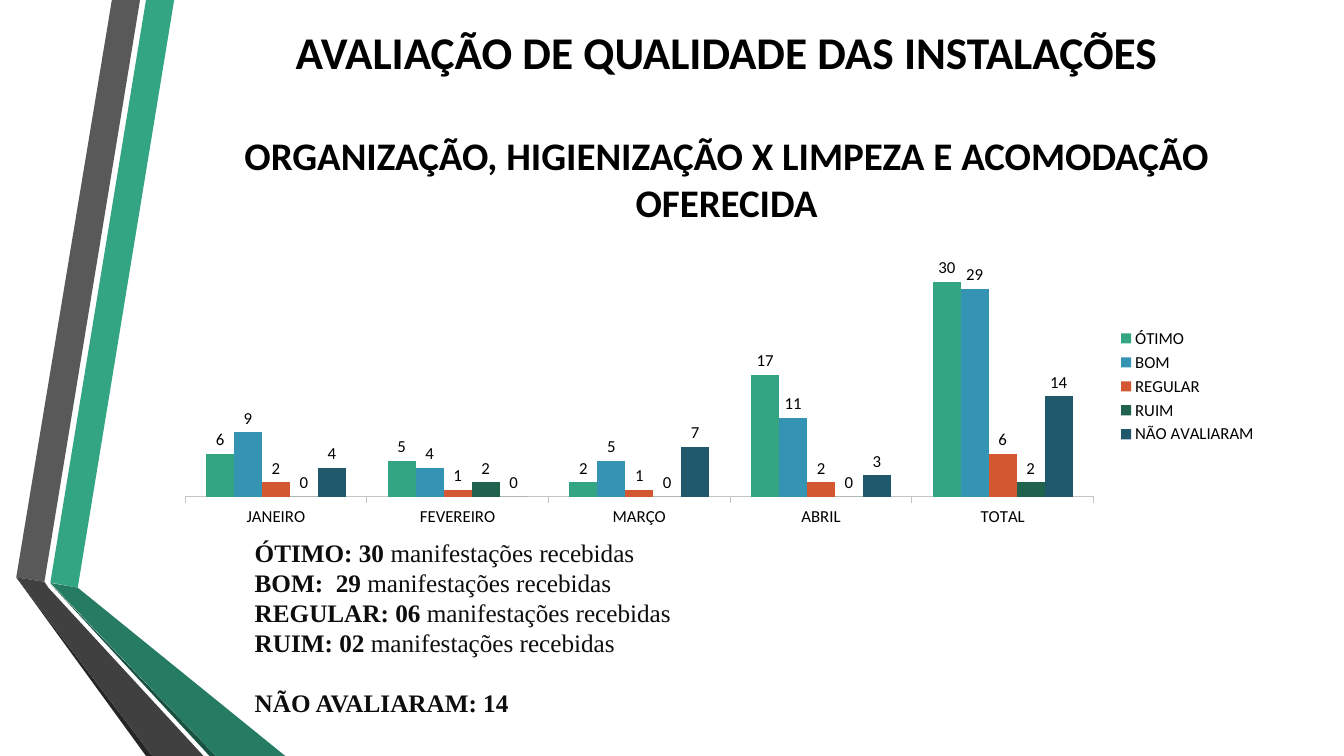
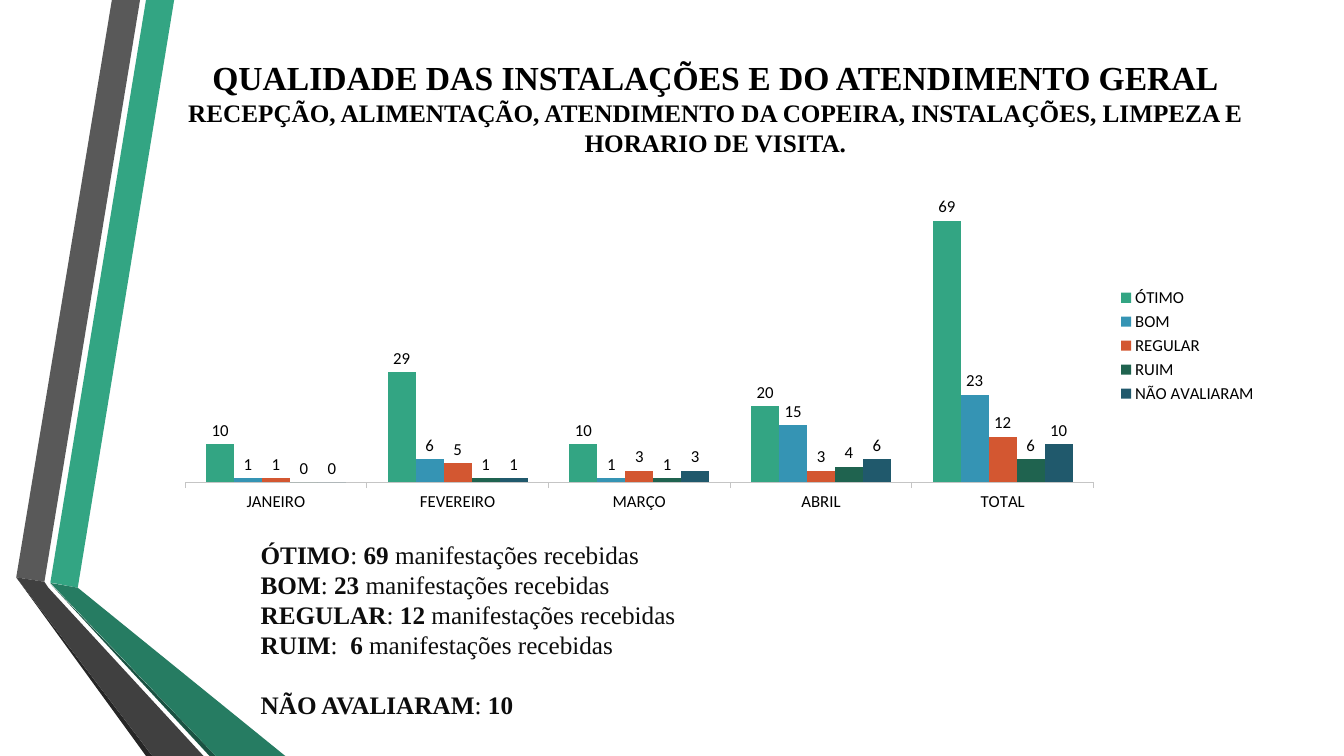
from pptx import Presentation
from pptx.chart.data import CategoryChartData
from pptx.dml.color import RGBColor
from pptx.enum.chart import XL_CHART_TYPE, XL_LABEL_POSITION, XL_LEGEND_POSITION, XL_TICK_MARK
from pptx.enum.text import PP_ALIGN
from pptx.util import Cm, Pt

COLORS = {
    "green": "33A583",
    "green_fold": "267C62",
    "green_edge": "1A5242",
    "gray": "595959",
    "gray_fold": "404040",
    "gray_edge": "262626",
    "blue": "3594B4",
    "orange": "D35731",
    "dark_green": "1F634F",
    "dark_blue": "20596C",
    "axis": "C5C5C5",
    "title": "000000",
    "body": "0D0D0D",
}
SANS = "Calibri"
SERIF = "Times New Roman"
BODY_SIZE = Pt(18)
BODY_LINE = Pt(21.5)
CONTENT_WIDTH = Cm(27.84)
CHART_LEFT = Cm(4.11)

BANDS = [
    ("green", [(1.27, 14.68), (1.96, 14.81), (4.39, 0), (3.68, 0)]),
    ("gray", [(3.53, 0), (2.82, 0), (0.41, 14.55), (1.12, 14.66)]),
    ("gray_edge", [(0.41, 14.55), (3.68, 19.05), (3.84, 19.05)]),
    ("green_edge", [(1.27, 14.71), (5.28, 19.05), (5.44, 19.05)]),
    ("green_fold", [(1.27, 14.69), (5.44, 19.05), (7.19, 19.05), (1.96, 14.81)]),
    ("gray_fold", [(5.13, 19.05), (1.22, 14.81), (1.12, 14.66), (0.41, 14.55), (3.84, 19.05)]),
]
MONTHS = ["JANEIRO", "FEVEREIRO", "MARÇO", "ABRIL", "TOTAL"]
RATINGS = [
    ("ÓTIMO", "green"),
    ("BOM", "blue"),
    ("REGULAR", "orange"),
    ("RUIM", "dark_green"),
    ("NÃO AVALIARAM", "dark_blue"),
]
RECEIVED = "manifestações recebidas"


def rgb(name):
    return RGBColor.from_string(COLORS[name])


def style_font(font, name, size, color, bold=False):
    font.name = name
    font.size = size
    font.bold = bold
    font.color.rgb = rgb(color)


def add_bands(slide):
    for color, points in BANDS:
        corners = [(Cm(x), Cm(y)) for x, y in points]
        builder = slide.shapes.build_freeform(*corners[0])
        builder.add_line_segments(corners[1:], close=True)
        shape = builder.convert_to_shape()
        shape.shadow.inherit = False
        shape.fill.solid()
        shape.fill.fore_color.rgb = rgb(color)
        shape.line.fill.background()


def add_text_frame(slide, left, top, width, height):
    text_frame = slide.shapes.add_textbox(left, top, width, height).text_frame
    text_frame.word_wrap = True
    return text_frame


def add_title(slide, left, top, height, font_name, lines, gap=0, subtitle_line=None):
    text_frame = add_text_frame(slide, left, top, CONTENT_WIDTH, height)
    text_frame.margin_top = 0
    text_frame.text = "\n".join(text for text, size in lines)
    for paragraph, (text, size) in zip(text_frame.paragraphs, lines):
        paragraph.alignment = PP_ALIGN.CENTER
        style_font(paragraph.runs[0].font, font_name, Pt(size), "title", bold=True)
    subtitle = text_frame.paragraphs[-1]
    subtitle.space_before = Pt(gap)
    subtitle.line_spacing = subtitle_line


def add_summary(slide, left, top, lines):
    text_frame = add_text_frame(slide, left, top, Cm(25.6), Cm(4.9))
    for index, parts in enumerate(lines):
        paragraph = text_frame.add_paragraph() if index else text_frame.paragraphs[0]
        paragraph.line_spacing = BODY_LINE
        for position, text in enumerate(parts):
            run = paragraph.add_run()
            run.text = text
            style_font(run.font, SERIF, BODY_SIZE, "body", bold=position % 2 == 0)
    text_frame.paragraphs[-1].space_before = BODY_LINE


def add_ratings_chart(slide, top, height, maximum, rows):
    chart_data = CategoryChartData()
    chart_data.categories = MONTHS
    for (rating, color), values in zip(RATINGS, rows):
        chart_data.add_series(rating, values)
    chart = slide.shapes.add_chart(
        XL_CHART_TYPE.COLUMN_CLUSTERED, CHART_LEFT, top, CONTENT_WIDTH, height, chart_data
    ).chart
    style_font(chart.font, SANS, Pt(12), "title")
    chart.has_title = False
    chart.has_legend = True
    chart.legend.position = XL_LEGEND_POSITION.RIGHT
    chart.legend.include_in_layout = False

    value_axis = chart.value_axis
    value_axis.visible = False
    value_axis.has_major_gridlines = False
    value_axis.minimum_scale = 0
    value_axis.maximum_scale = maximum
    category_axis = chart.category_axis
    category_axis.major_tick_mark = XL_TICK_MARK.OUTSIDE
    category_axis.format.line.color.rgb = rgb("axis")
    category_axis.format.line.width = Pt(0.75)

    plot = chart.plots[0]
    plot.gap_width = 150
    plot.overlap = 0
    plot.vary_by_categories = False
    plot.has_data_labels = True
    plot.data_labels.show_value = True
    plot.data_labels.position = XL_LABEL_POSITION.OUTSIDE_END
    style_font(plot.data_labels.font, SANS, Pt(12), "title")
    for series, (rating, color) in zip(plot.series, RATINGS):
        series.format.fill.solid()
        series.format.fill.fore_color.rgb = rgb(color)


def add_slide(presentation):
    slide = presentation.slides.add_slide(presentation.slide_layouts[6])
    add_bands(slide)
    return slide


def add_facilities_slide(presentation):
    slide = add_slide(presentation)
    add_title(slide, Cm(4.39), Cm(0.61), Cm(5.2), SANS, [
        ("AVALIAÇÃO DE QUALIDADE DAS INSTALAÇÕES", 32.4),
        ("ORGANIZAÇÃO, HIGIENIZAÇÃO X LIMPEZA E ACOMODAÇÃO OFERECIDA", 27.9),
    ], gap=37.5)
    add_summary(slide, Cm(6.17), Cm(13.41), [
        ("ÓTIMO: 30 ", RECEIVED),
        ("BOM:  29 ", RECEIVED),
        ("REGULAR: 06 ", RECEIVED),
        ("RUIM: 02 ", RECEIVED),
        ("NÃO AVALIARAM: 14",),
    ])
    add_ratings_chart(slide, Cm(6.05), Cm(7.37), 35, [
        (6, 5, 2, 17, 30),
        (9, 4, 5, 11, 29),
        (2, 1, 1, 2, 6),
        (0, 2, 0, 0, 2),
        (4, 0, 7, 3, 14),
    ])


def add_service_slide(presentation):
    slide = add_slide(presentation)
    add_title(slide, CHART_LEFT, Cm(1.44), Cm(2.8), SERIF, [
        ("QUALIDADE DAS INSTALAÇÕES E DO ATENDIMENTO GERAL", 24),
        ("RECEPÇÃO, ALIMENTAÇÃO, ATENDIMENTO DA COPEIRA, INSTALAÇÕES, LIMPEZA E "
         "HORARIO DE VISITA.", 18),
    ], subtitle_line=BODY_LINE)
    add_summary(slide, Cm(6.32), Cm(13.46), [
        ("ÓTIMO", ": ", "69 ", RECEIVED),
        ("BOM", ": ", "23 ", RECEIVED),
        ("REGULAR", ": ", "12 ", RECEIVED),
        ("RUIM", ":  ", "6 ", RECEIVED),
        ("NÃO AVALIARAM", ": ", "10"),
    ])
    add_ratings_chart(slide, Cm(4.34), Cm(8.74), 80, [
        (10, 29, 10, 20, 69),
        (1, 6, 1, 15, 23),
        (1, 5, 3, 3, 12),
        (0, 1, 1, 4, 6),
        (0, 1, 3, 6, 10),
    ])


def main():
    presentation = Presentation()
    presentation.slide_width = Cm(33.87)
    presentation.slide_height = Cm(19.05)
    add_facilities_slide(presentation)
    add_service_slide(presentation)
    presentation.save("out.pptx")


if __name__ == "__main__":
    main()
